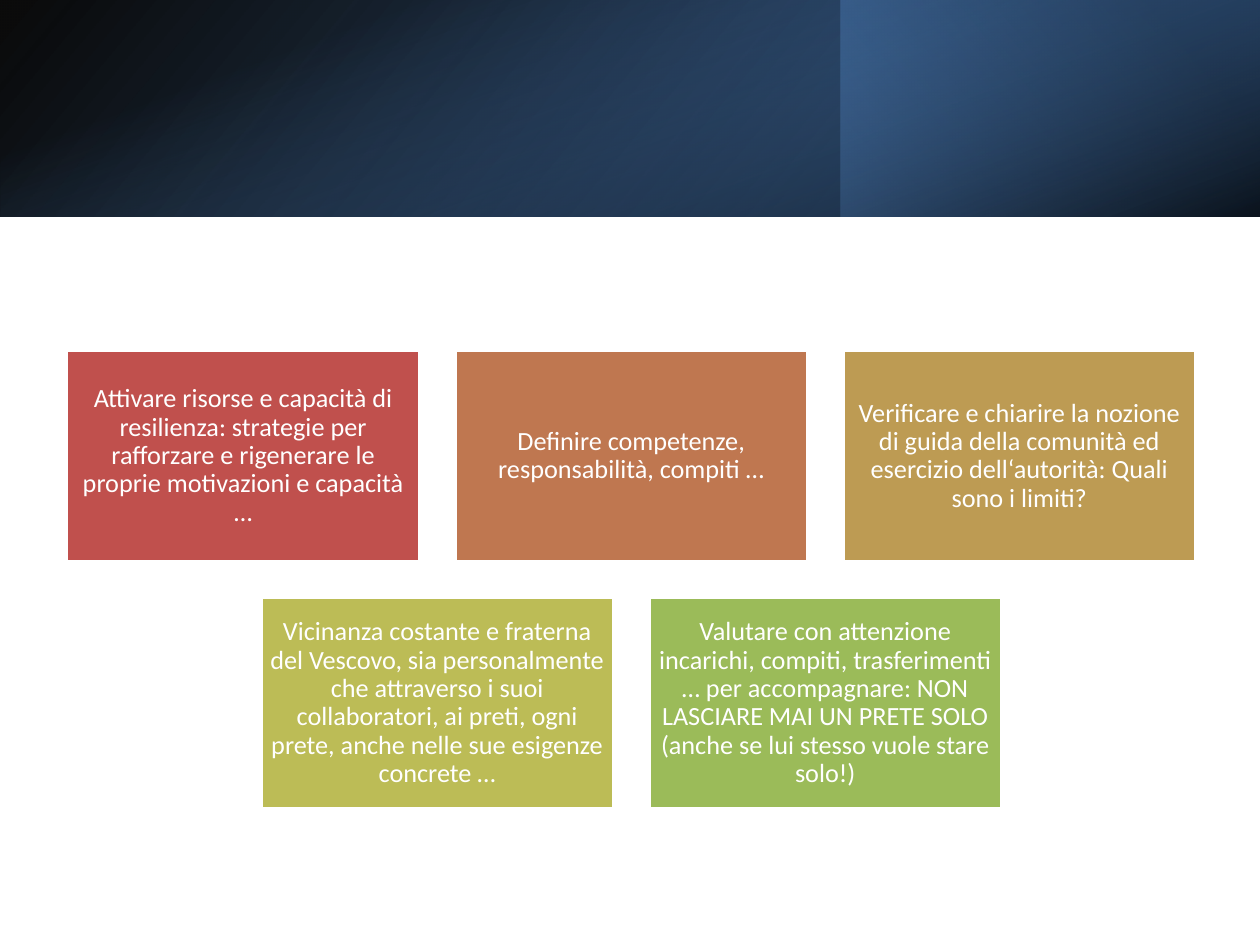
"""Build a slide with a gradient banner above five coloured recommendation cards."""
import pptx
import pptx.dml.color
import pptx.enum.shapes
import pptx.enum.text
import pptx.oxml.ns
import pptx.util
from lxml import etree

Inches = pptx.util.Inches
RGBColor = pptx.dml.color.RGBColor
RECTANGLE = pptx.enum.shapes.MSO_SHAPE.RECTANGLE

WHITE = RGBColor(0xFF, 0xFF, 0xFF)
BLACK = RGBColor(0x00, 0x00, 0x00)
NAVY = RGBColor(0x25, 0x40, 0x61)
STEEL = RGBColor(0x37, 0x60, 0x92)
BLUE = RGBColor(0x4F, 0x81, 0xBD)
RED = RGBColor(0xC0, 0x50, 0x4D)
COPPER = RGBColor(0xBF, 0x77, 0x50)
OCHRE = RGBColor(0xBD, 0x9B, 0x53)
OLIVE = RGBColor(0xBC, 0xBC, 0x56)
GREEN = RGBColor(0x9B, 0xBB, 0x59)

presentation = pptx.Presentation()
presentation.slide_width = Inches(10)
presentation.slide_height = Inches(7.5)
slide = presentation.slides.add_slide(presentation.slide_layouts[6])


def add_rectangle(left, top, width, height):
    rectangle = slide.shapes.add_shape(
        RECTANGLE, Inches(left), Inches(top), Inches(width), Inches(height))
    rectangle.shadow.inherit = False
    return rectangle


def add_banner_layer(bounds, rotation, angle, stops):
    layer = add_rectangle(*bounds)
    layer.rotation = rotation
    layer.line.fill.background()
    layer.fill.gradient()
    layer.fill.gradient_angle = 360 - angle
    for stop, (position, color, opacity) in zip(layer.fill.gradient_stops, stops):
        stop.position = position
        stop.color.rgb = color
    colors = layer.element.spPr.iter(pptx.oxml.ns.qn("a:srgbClr"))
    for color_element, (position, color, opacity) in zip(colors, stops):
        alpha = etree.SubElement(color_element, pptx.oxml.ns.qn("a:alpha"))
        alpha.set("val", str(opacity * 1000))
    return layer


base = add_banner_layer((0, 0, 10, 1.72), 0, 140, [(0, BLACK, 96), (1, STEEL, 100)])
base.element.spPr.xfrm.set("flipH", "1")
add_banner_layer((6.67, 0, 3.33, 1.72), 180, 320, [(0.19, NAVY, 68), (1, BLUE, 79)])
add_banner_layer((4.14, -4.14, 1.72, 10), 90, 340, [(0.23, BLUE, 0), (0.99, BLACK, 74)])

CARD_WIDTH, CARD_HEIGHT, GAP = 2.8, 1.68, 0.28
ROWS_TOP, ROWS_CENTER = 2.78, 5.01
card_rows = [
    [
        (RED, "Attivare risorse e capacità di resilienza: strategie per rafforzare "
              "e rigenerare le proprie motivazioni e capacità …"),
        (COPPER, "Definire competenze, responsabilità, compiti …"),
        (OCHRE, "Verificare e chiarire la nozione di guida della comunità ed "
                "esercizio dell‘autorità: Quali sono i limiti?"),
    ],
    [
        (OLIVE, "Vicinanza costante e fraterna del Vescovo, sia personalmente che "
                "attraverso i suoi collaboratori, ai preti, ogni prete, anche nelle "
                "sue esigenze concrete …"),
        (GREEN, "Valutare con attenzione incarichi, compiti, trasferimenti … per "
                "accompagnare: NON LASCIARE MAI UN PRETE SOLO (anche se lui stesso "
                "vuole stare solo!)"),
    ],
]

for row, cards in enumerate(card_rows):
    row_width = len(cards) * (CARD_WIDTH + GAP) - GAP
    row_left = ROWS_CENTER - row_width / 2
    for column, (color, wording) in enumerate(cards):
        card = add_rectangle(
            row_left + column * (CARD_WIDTH + GAP),
            ROWS_TOP + row * (CARD_HEIGHT + GAP), CARD_WIDTH, CARD_HEIGHT)
        card.fill.solid()
        card.fill.fore_color.rgb = color
        card.line.color.rgb = WHITE
        card.line.width = pptx.util.Pt(2)
        frame = card.text_frame
        frame.word_wrap = True
        frame.vertical_anchor = pptx.enum.text.MSO_ANCHOR.MIDDLE
        frame.margin_left = frame.margin_right = Inches(0.06)
        frame.margin_top = frame.margin_bottom = Inches(0.06)
        paragraph = frame.paragraphs[0]
        paragraph.alignment = pptx.enum.text.PP_ALIGN.CENTER
        paragraph.line_spacing = 0.9
        run = paragraph.add_run()
        run.text = wording
        run.font.name = "Calibri"
        run.font.size = pptx.util.Pt(15)
        run.font.color.rgb = WHITE

presentation.save("out.pptx")
